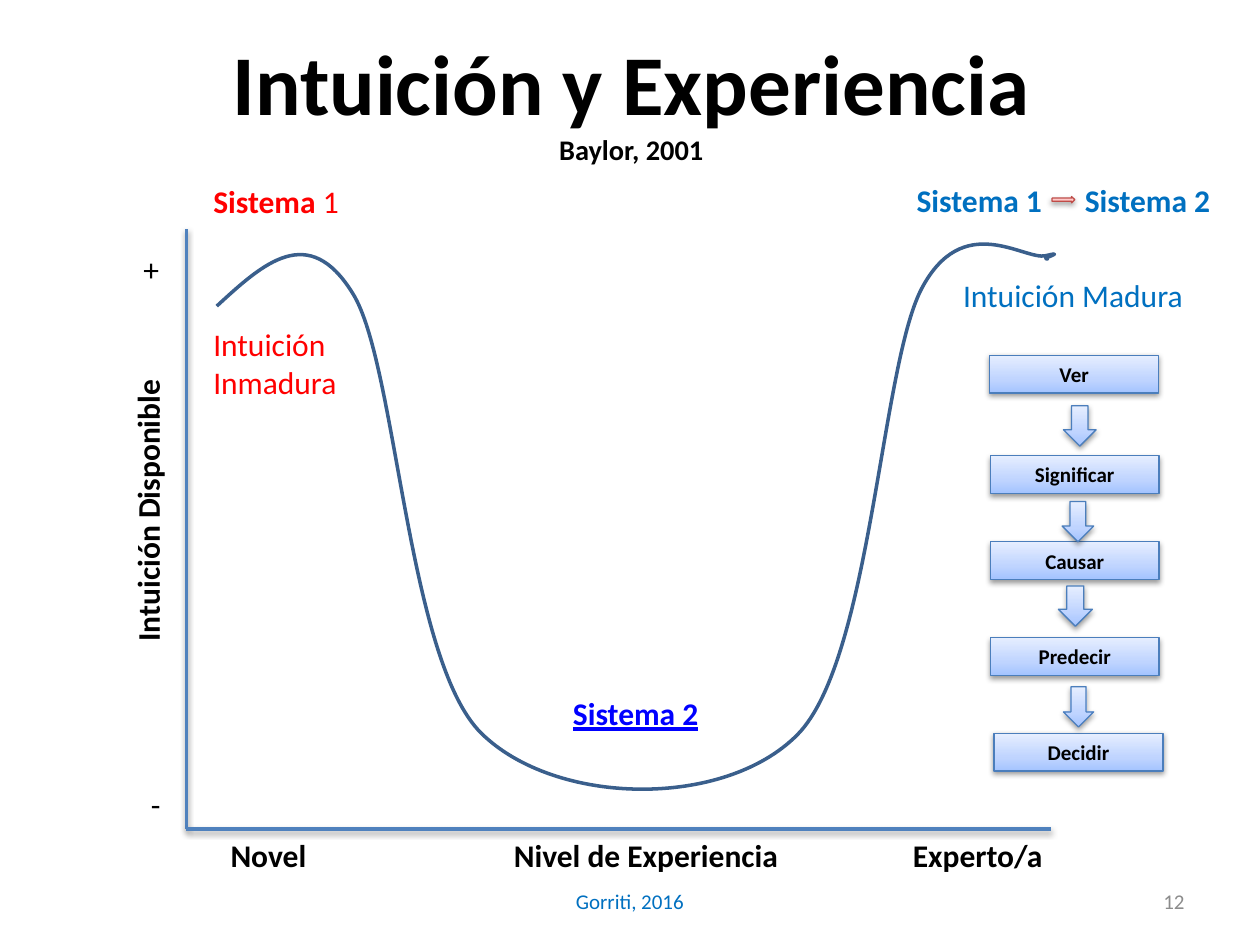
from dataclasses import dataclass
from typing import NamedTuple

import pptx
import pptx.dml.color
import pptx.enum.shapes
import pptx.enum.text
import pptx.oxml
import pptx.oxml.ns
import pptx.util

COLUMNS, ROWS = 40, 30
CELL = pptx.util.Inches(0.25)

SHAPE = pptx.enum.shapes.MSO_SHAPE
ALIGN = pptx.enum.text.PP_ALIGN
ANCHOR = pptx.enum.text.MSO_ANCHOR
NS = pptx.oxml.ns.nsdecls("a")


@dataclass(frozen=True)
class Theme:
    font: str = "Calibri"
    title: float = 48.6
    subtitle: float = 16.2
    body: float = 18
    small: float = 12
    ink: str = "000000"
    novice: str = "FF0000"
    expert: str = "0070C0"
    system2: str = "0000FF"
    muted: str = "8C8C8C"
    axis: str = "4F81BD"
    curve: str = "3A5F8C"
    step_line: str = "4B7EBC"
    step_fill: tuple[str, ...] = ("A4C4FF", "BFD4FF", "E6EEFF")
    shift_line: str = "BF4C48"
    shift_fill: tuple[str, ...] = ("FFA6A5", "FFC0BF", "FFE7E7")


THEME = Theme()


class Area(NamedTuple):
    """Left, top, width and height in grid cells."""
    left: float
    top: float
    width: float
    height: float

    def emu(self) -> list[int]:
        return [cells(value) for value in self]


class Run(NamedTuple):
    text: str
    bold: bool = False
    underline: bool = False
    size: float | None = None


class Step(NamedTuple):
    name: str
    left: float
    top: float


def cells(count: float) -> int:
    return round(count * CELL)


def rgb(value: str) -> pptx.dml.color.RGBColor:
    return pptx.dml.color.RGBColor.from_string(value)


def write(frame, *lines: list[Run], size: float = THEME.body, color: str = THEME.ink,
          align=ALIGN.LEFT, anchor=ANCHOR.TOP) -> None:
    """Write lines of runs as one paragraph with line breaks."""
    frame.word_wrap = True
    frame.vertical_anchor = anchor
    paragraph = frame.paragraphs[0]
    paragraph.alignment = align
    for number, line in enumerate(lines):
        if number:
            paragraph.add_line_break()
        for part in line:
            run = paragraph.add_run()
            run.text = part.text
            font = run.font
            font.name, font.size = THEME.font, pptx.util.Pt(part.size or size)
            font.bold, font.underline = part.bold, part.underline
            font.color.rgb = rgb(color)


def add_label(slide, area: Area, *lines: list[Run], **text_format):
    label = slide.shapes.add_textbox(*area.emu())
    write(label.text_frame, *lines, **text_format)
    return label


def set_line(shape, color: str, width: float) -> None:
    shape.line.color.rgb = rgb(color)
    shape.line.width = pptx.util.Pt(width)


def add_shadow(shape) -> None:
    """Give a soft shadow below; call it once the line is set."""
    shape._element.spPr.append(pptx.oxml.parse_xml(
        f'<a:effectLst {NS}><a:outerShdw blurRad="40000" dist="20000" dir="5400000" '
        'rotWithShape="0"><a:srgbClr val="000000"><a:alpha val="38000"/></a:srgbClr>'
        '</a:outerShdw></a:effectLst>'))


def add_raised(slide, kind, area: Area, fill: tuple[str, ...], line: str):
    """Add a shape with a vertical gradient, a thin line and a shadow."""
    shape = slide.shapes.add_shape(kind, *area.emu())
    stops = "".join(f'<a:gs pos="{position}"><a:srgbClr val="{color}"/></a:gs>'
                    for position, color in zip((0, 35000, 100000), fill))
    shape._element.spPr.append(pptx.oxml.parse_xml(
        f'<a:gradFill {NS} rotWithShape="1"><a:gsLst>{stops}</a:gsLst>'
        '<a:lin ang="16200000" scaled="0"/></a:gradFill>'))
    set_line(shape, line, 0.75)
    add_shadow(shape)
    return shape


def add_axis(slide, start: tuple[float, float], end: tuple[float, float]) -> None:
    axis = slide.shapes.add_connector(
        pptx.enum.shapes.MSO_CONNECTOR.STRAIGHT, *map(cells, start + end))
    set_line(axis, THEME.axis, 2)
    add_shadow(axis)


def add_curve(slide, area: Area, nodes: list[tuple[float, float]]) -> None:
    """Draw bends through every third node; the nodes between are handles."""
    left, top, width, height = area.emu()
    builder = slide.shapes.build_freeform(left, top)
    builder.add_line_segments([(left + width, top + height)], close=False)
    curve = builder.convert_to_shape()
    outline = curve._element.spPr.find(".//" + pptx.oxml.ns.qn("a:path"))
    for command in list(outline):
        outline.remove(command)
    points = [f'<a:pt x="{cells(x) - left}" y="{cells(y) - top}"/>' for x, y in nodes]
    outline.append(pptx.oxml.parse_xml(f"<a:moveTo {NS}>{points[0]}</a:moveTo>"))
    for index in range(1, len(points), 3):
        bend = "".join(points[index:index + 3])
        outline.append(pptx.oxml.parse_xml(f"<a:cubicBezTo {NS}>{bend}</a:cubicBezTo>"))
    curve.fill.background()
    set_line(curve, THEME.curve, 2)
    curve.shadow.inherit = False


def add_system_shift(slide) -> None:
    shift = add_label(slide, Area(27.8, 5.56, 11.88, 1.6),
                      [Run("Sistema 1\tSistema 2", bold=True)], color=THEME.expert)
    shift.text_frame.margin_left = cells(1.3)
    tab = cells(5.34)
    shift.text_frame.paragraphs[0]._p.get_or_add_pPr().append(pptx.oxml.parse_xml(
        f'<a:tabLst {NS}><a:tab pos="{tab}" algn="l"/></a:tabLst>'))
    add_raised(slide, SHAPE.RIGHT_ARROW, Area(33.4, 6.24, 0.72, 0.2),
               THEME.shift_fill, THEME.shift_line)


def add_steps(slide) -> None:
    steps = [Step("Ver", 31.42, 11.28), Step("Significar", 31.44, 14.46),
             Step("Causar", 31.44, 17.2), Step("Predecir", 31.44, 20.24),
             Step("Decidir", 31.56, 23.28)]
    for step in steps:
        box = add_raised(slide, SHAPE.RECTANGLE, Area(step.left, step.top, 5.36, 1.2),
                         THEME.step_fill, THEME.step_line)
        write(box.text_frame, [Run(step.name, bold=True)], size=THEME.small,
              align=ALIGN.CENTER, anchor=ANCHOR.MIDDLE)
    for left, top, width in [(33.76, 12.88, 1.04), (33.72, 15.92, 1),
                             (33.6, 18.6, 1.08), (33.76, 21.8, 0.96)]:
        add_raised(slide, SHAPE.DOWN_ARROW, Area(left, top, width, 1.28),
                   THEME.step_fill, THEME.step_line)


def main() -> None:
    deck = pptx.Presentation()
    deck.slide_width, deck.slide_height = cells(COLUMNS), cells(ROWS)
    slide = deck.slides.add_slide(deck.slide_layouts[6])

    add_label(slide, Area(2.04, 1.47, 36, 3.32),
              [Run("Intuición y Experiencia", bold=True, size=THEME.title)],
              [Run("Baylor, 2001", bold=True, size=THEME.subtitle)],
              align=ALIGN.CENTER, anchor=ANCHOR.MIDDLE)
    add_label(slide, Area(13.66, 27.8, 12.68, 1.6), [Run("Gorriti, 2016")],
              size=THEME.small, color=THEME.expert, align=ALIGN.CENTER, anchor=ANCHOR.MIDDLE)
    add_label(slide, Area(28.68, 27.8, 9.32, 1.6), [Run("12")],
              size=THEME.small, color=THEME.muted, align=ALIGN.RIGHT, anchor=ANCHOR.MIDDLE)

    add_curve(slide, Area(6.88, 7.76, 26.6, 17.32), [
        (6.88, 9.72), (8.36, 8.36), (9.8, 7.04), (11.2, 9.32),
        (12.6, 11.56), (12.92, 20.96), (15.28, 23.28),
        (17.64, 25.6), (23, 25.68), (25.32, 23.32),
        (27.64, 20.96), (27.96, 11.72), (29.24, 9.2),
        (30.56, 6.64), (32.52, 8.28), (33.2, 8.12),
        (33.84, 7.96), (33.16, 8.2), (33.2, 8.2),
        (33.2, 8.24), (33.24, 8.24), (33.28, 8.2)])
    corner = (5.92, 26.32)
    add_axis(slide, (5.92, 7.28), corner)
    add_axis(slide, corner, (33.36, 26.32))

    vertical = add_label(slide, Area(3.88, 11.33, 2, 9.76),
                         [Run("Intuición Disponible", bold=True)], align=ALIGN.CENTER)
    vertical.text_frame._txBody.bodyPr.set("vert", "vert270")
    for name, left, width in [("Novel", 5.94, 5.16), ("Nivel de Experiencia", 14.85, 11.32),
                              ("Experto/a", 28.36, 5.36)]:
        add_label(slide, Area(left, 26.34, width, 1.6), [Run(name, bold=True)],
                  align=ALIGN.CENTER)
    add_label(slide, Area(4.16, 7.74, 1.56, 1.6), [Run("+")])
    add_label(slide, Area(4.16, 24.72, 1.56, 1.6), [Run("-")], align=ALIGN.CENTER)

    add_label(slide, Area(6.38, 5.58, 5.36, 1.6),
              [Run("Sistema ", bold=True), Run("1")], color=THEME.novice)
    add_label(slide, Area(6.38, 10.12, 5.44, 2.84), [Run("Intuición Inmadura")],
              color=THEME.novice)
    add_label(slide, Area(17, 21.84, 6.36, 1.6),
              [Run("Sistema", True, True), Run(" ", False, True), Run("2", True, True)],
              color=THEME.system2, align=ALIGN.CENTER)
    add_label(slide, Area(30.18, 8.56, 8.2, 1.6), [Run("Intuición Madura")],
              color=THEME.expert)
    add_system_shift(slide)
    add_steps(slide)
    deck.save("out.pptx")


if __name__ == "__main__":
    main()
